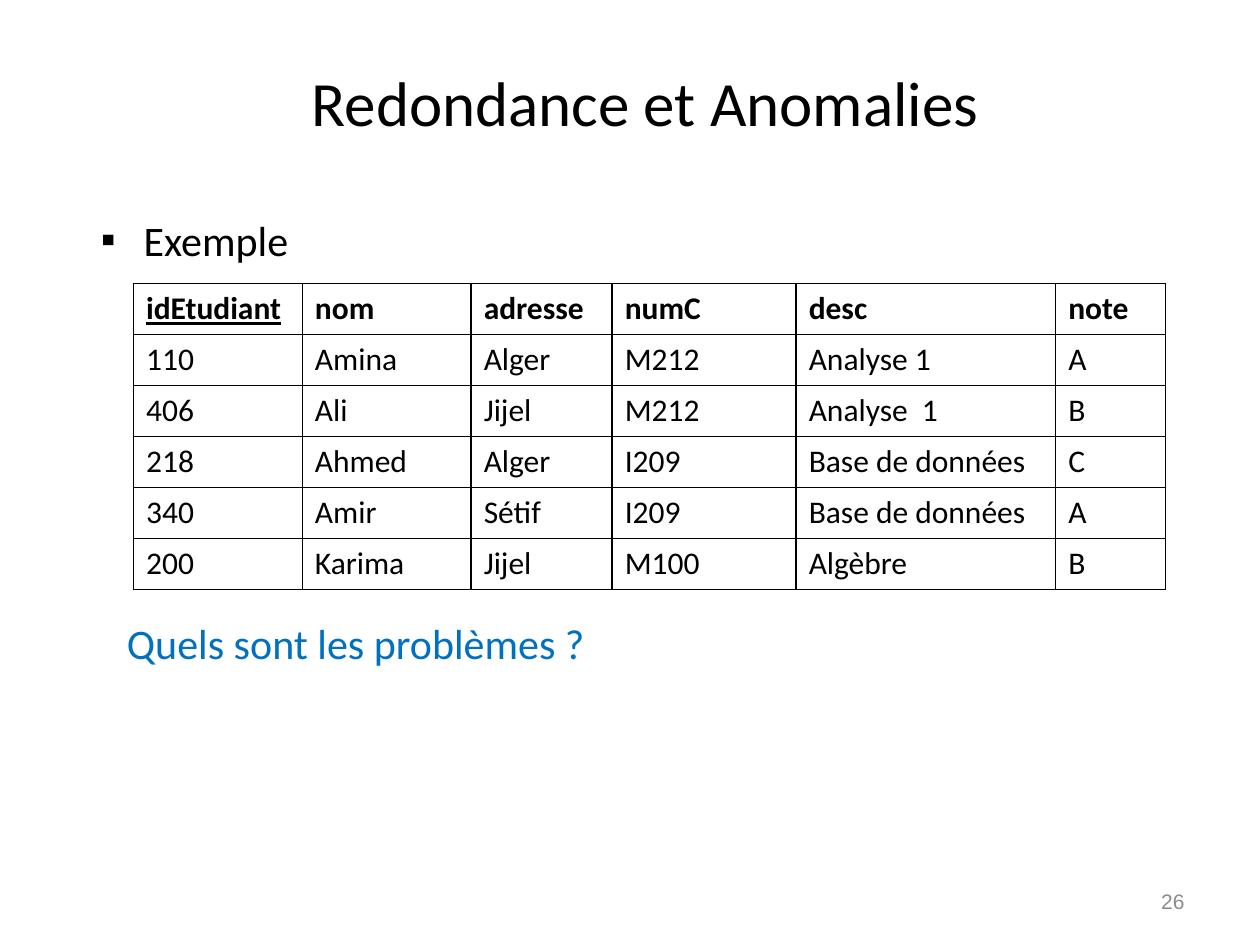
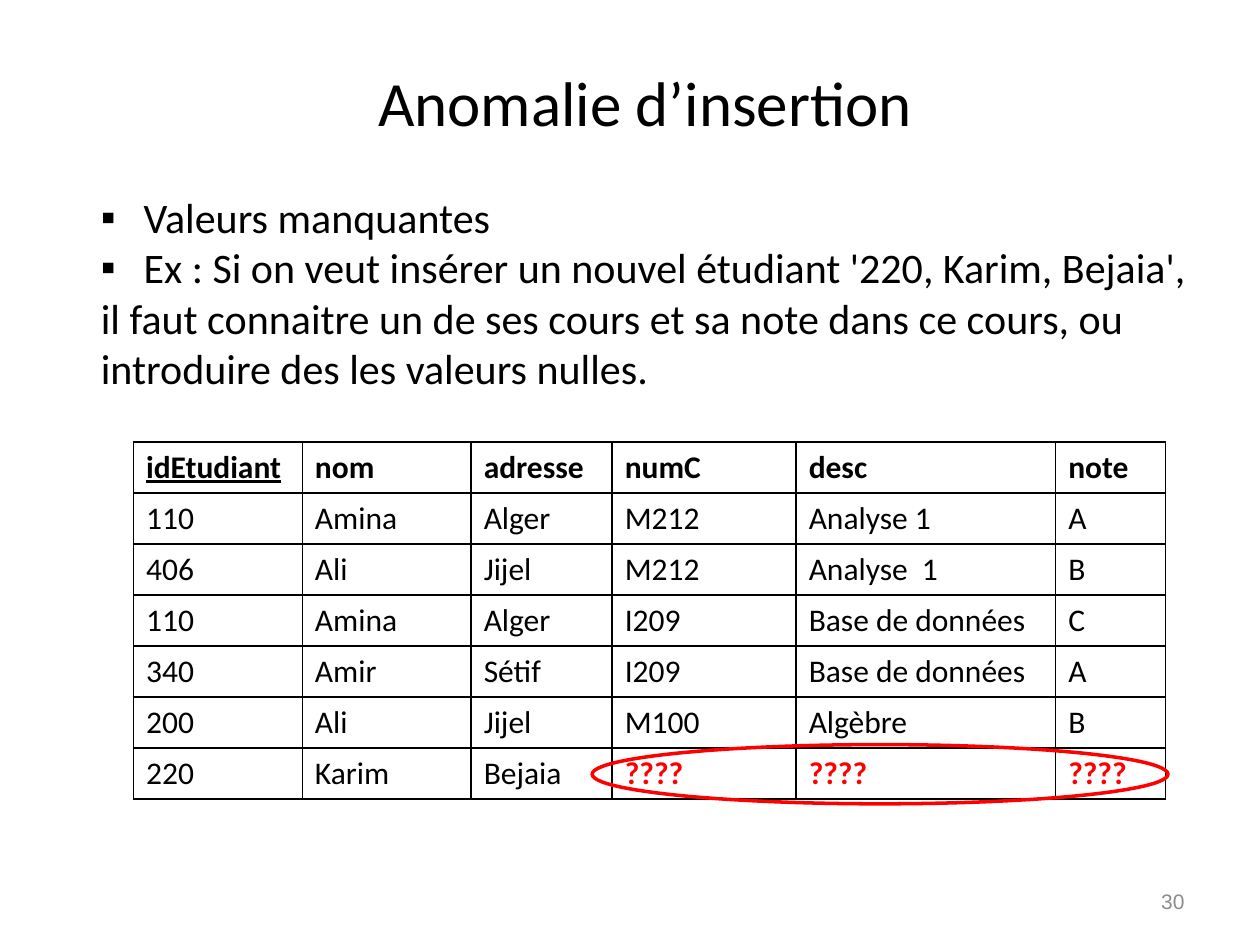
from dataclasses import dataclass
from lxml import etree
from pptx import Presentation
from pptx.dml.color import RGBColor
from pptx.enum.shapes import MSO_SHAPE
from pptx.enum.text import MSO_ANCHOR, MSO_AUTO_SIZE, PP_ALIGN
from pptx.oxml.ns import qn
from pptx.util import Inches, Pt

BLACK = RGBColor(0x00, 0x00, 0x00)
GREY = RGBColor(0x8C, 0x8C, 0x8C)
BLUE = RGBColor(0x00, 0x70, 0xC0)
RED = RGBColor(0xFF, 0x00, 0x00)

ELLIPSE = MSO_SHAPE.OVAL
MIDDLE, TOP = MSO_ANCHOR.MIDDLE, MSO_ANCHOR.TOP
NO_FIT = MSO_AUTO_SIZE.NONE
LEFT, CENTER, RIGHT = PP_ALIGN.LEFT, PP_ALIGN.CENTER, PP_ALIGN.RIGHT

PAGE_WIDTH, PAGE_HEIGHT = Inches(10), Inches(7.5)
GRID_COLUMNS, GRID_ROWS = 100, 75
UNIT_X, UNIT_Y = PAGE_WIDTH / GRID_COLUMNS, PAGE_HEIGHT / GRID_ROWS

TITLE_FORMAT = {"name": "Calibri", "size": Pt(36)}
BODY_FORMAT = {"name": "Calibri", "size": Pt(24)}
CELL_FORMAT = {"name": "Calibri", "size": Pt(18), "bold": False}
HEADER_FORMAT = CELL_FORMAT | {"bold": True}
KEY_FORMAT = HEADER_FORMAT | {"underline": True}
NUMBER_FORMAT = {"name": "Arial", "size": Pt(12)}

COLUMN_WIDTHS = [13.4, 13.4, 11.2, 14.6, 20.6, 8.7]
ROW_HEIGHT = 4.05
BULLET_TAB = 3.4
MISSING = "????"

HEADER = ["idEtudiant", "nom", "adresse", "numC", "desc", "note"]
AMINA = ["110", "Amina", "Alger", "M212", "Analyse 1", "A"]
ALI = ["406", "Ali", "Jijel", "M212", "Analyse  1", "B"]
AMIR = ["340", "Amir", "Sétif", "I209", "Base de données", "A"]


@dataclass
class Box:
    left: float
    top: float
    width: float
    height: float

    def lengths(self):
        return (round(self.left * UNIT_X), round(self.top * UNIT_Y),
                round(self.width * UNIT_X), round(self.height * UNIT_Y))


TITLE_BOX = Box(5.9, 2.9, 90.6, 10.2)
NUMBER_BOX = Box(71.7, 69.5, 23.3, 4)


def set_values(target, values):
    for name, value in values.items():
        setattr(target, name, value)


def write(para, text, values, color=BLACK):
    span = para.add_run()
    span.text = text
    set_values(span.font, values)
    span.font.color.rgb = color


def place(shape, box):
    set_values(shape, dict(zip(("left", "top", "width", "height"), box.lengths())))


def add_title(page, box, text):
    title = page.shapes.title
    place(title, box)
    frame = title.text_frame
    set_values(frame, {"vertical_anchor": MIDDLE, "auto_size": NO_FIT})
    frame.paragraphs[0].alignment = CENTER
    write(frame.paragraphs[0], text, TITLE_FORMAT)


def add_label(page, box, text, values, color, align=LEFT, anchor=TOP):
    frame = page.shapes.add_textbox(*box.lengths()).text_frame
    set_values(frame, {"word_wrap": True, "vertical_anchor": anchor})
    frame.paragraphs[0].alignment = align
    write(frame.paragraphs[0], text, values, color)


def add_bullet(para):
    properties = para._p.get_or_add_pPr()
    properties.set("marL", "0")
    properties.set("indent", "0")
    etree.SubElement(properties, qn("a:buChar"), char="▪")
    tabs = etree.SubElement(properties, qn("a:tabLst"))
    etree.SubElement(tabs, qn("a:tab"), pos=str(round(BULLET_TAB * UNIT_X)), algn="l")


def add_list(page, box, items):
    body = page.placeholders[1]
    place(body, box)
    frame = body.text_frame
    set_values(frame, {"auto_size": NO_FIT, "vertical_anchor": TOP, "word_wrap": True})
    for index, item in enumerate(items):
        para = frame.add_paragraph() if index else frame.paragraphs[0]
        add_bullet(para)
        set_values(para, {"space_before": Pt(0), "alignment": LEFT})
        write(para, "\t" + item, BODY_FORMAT)


def draw_borders(cell):
    properties = cell._tc.get_or_add_tcPr()
    for side in ("a:lnL", "a:lnR", "a:lnT", "a:lnB"):
        line = etree.SubElement(properties, qn(side), w=str(Pt(1)))
        fill = etree.SubElement(line, qn("a:solidFill"))
        etree.SubElement(fill, qn("a:srgbClr"), val=str(BLACK))


def cell_style(row, column, text):
    if row == 0:
        return (KEY_FORMAT if column == 0 else HEADER_FORMAT), BLACK
    if text == MISSING:
        return HEADER_FORMAT, RED
    return CELL_FORMAT, BLACK


def add_student_table(page, left, top, records):
    rows = [HEADER, *records]
    box = Box(left, top, sum(COLUMN_WIDTHS), ROW_HEIGHT * len(rows))
    table = page.shapes.add_table(len(rows), len(HEADER), *box.lengths()).table
    set_values(table, {"first_row": False, "horz_banding": False})
    for column, width in zip(table.columns, COLUMN_WIDTHS):
        column.width = round(width * UNIT_X)
    for row, texts in enumerate(rows):
        for column, text in enumerate(texts):
            cell = table.cell(row, column)
            draw_borders(cell)
            cell.fill.background()
            write(cell.text_frame.paragraphs[0], text, *cell_style(row, column, text))
    return box


def circle_missing_values(page, table_box):
    known_width = sum(COLUMN_WIDTHS[:HEADER.index("numC")])
    left = table_box.left + known_width - 1.6
    right = table_box.left + table_box.width + 0.2
    top = table_box.top + table_box.height - ROW_HEIGHT - 0.3
    box = Box(left, top, right - left, ROW_HEIGHT + 0.65)
    ellipse = page.shapes.add_shape(ELLIPSE, *box.lengths())
    ellipse.shadow.inherit = False
    ellipse.fill.background()
    ellipse.line.color.rgb = RED
    ellipse.line.width = Pt(2)


def add_page(deck, title, number):
    page = deck.slides.add_slide(deck.slide_layouts[1])
    add_title(page, TITLE_BOX, title)
    add_label(page, NUMBER_BOX, number, NUMBER_FORMAT, GREY, RIGHT, MIDDLE)
    return page


def add_redundancy_page(deck):
    page = add_page(deck, "Redondance et Anomalies", "26")
    add_list(page, Box(7, 16.5, 90.3, 5), ["Exemple"])
    add_student_table(page, 10.6, 22.5, [
        AMINA,
        ALI,
        ["218", "Ahmed", "Alger", "I209", "Base de données", "C"],
        AMIR,
        ["200", "Karima", "Jijel", "M100", "Algèbre", "B"],
    ])
    add_label(page, Box(9.1, 48.5, 39.4, 5), "Quels sont les problèmes ?", BODY_FORMAT, BLUE)


def add_insertion_page(deck):
    page = add_page(deck, "Anomalie d’insertion", "30")
    add_list(page, Box(7, 14.7, 90.3, 17.2), [
        "Valeurs manquantes",
        "Ex : Si on veut insérer un nouvel étudiant '220, Karim, Bejaia', "
        "il faut connaitre un de ses cours et sa note dans ce cours, "
        "ou introduire des les valeurs nulles.",
    ])
    table_box = add_student_table(page, 10.6, 35.1, [
        AMINA,
        ALI,
        ["110", "Amina", "Alger", "I209", "Base de données", "C"],
        AMIR,
        ["200", "Ali", "Jijel", "M100", "Algèbre", "B"],
        ["220", "Karim", "Bejaia", MISSING, MISSING, MISSING],
    ])
    circle_missing_values(page, table_box)


def main():
    deck = Presentation()
    set_values(deck, {"slide_width": PAGE_WIDTH, "slide_height": PAGE_HEIGHT})
    add_redundancy_page(deck)
    add_insertion_page(deck)
    deck.save("out.pptx")


if __name__ == "__main__":
    main()
